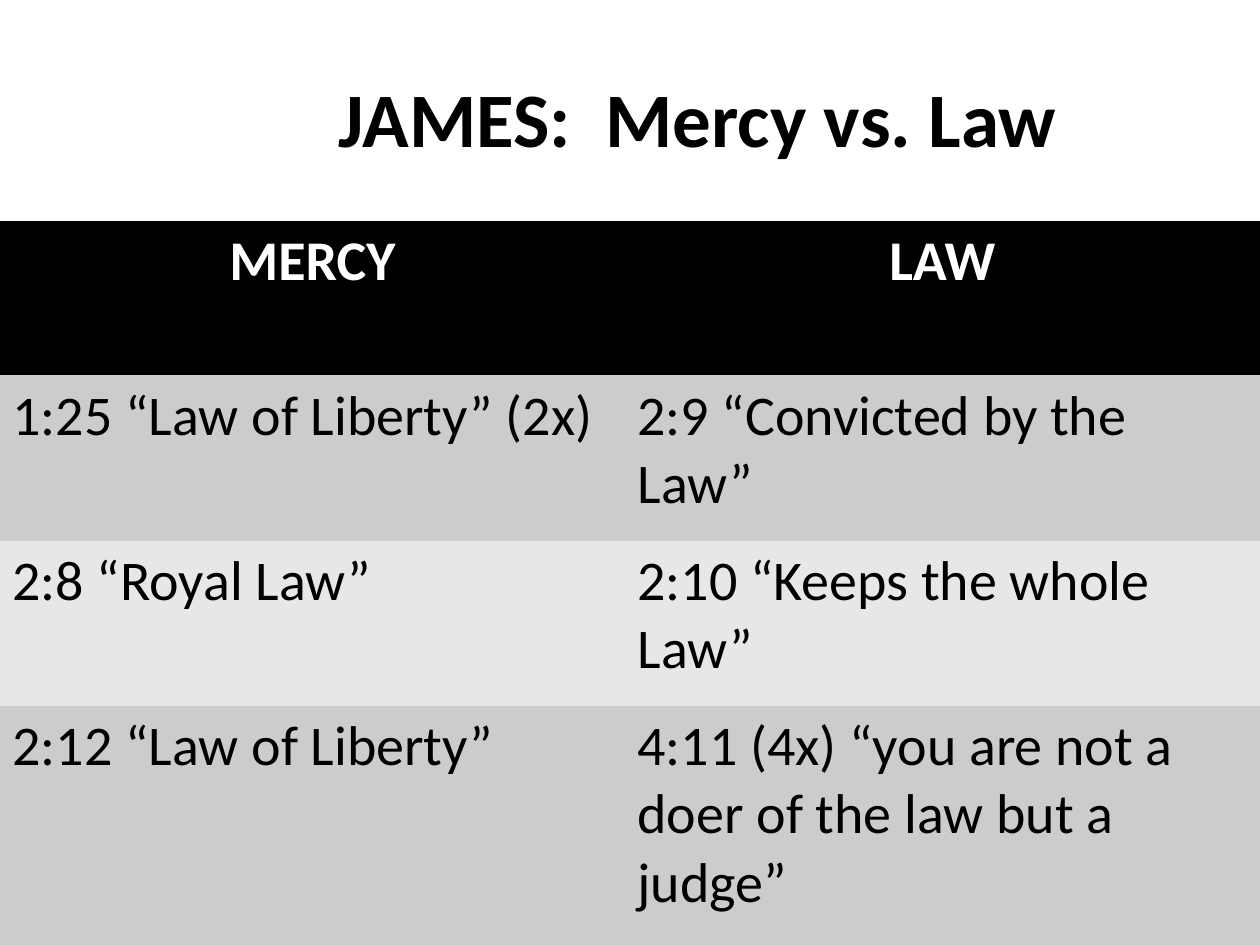
from pptx import Presentation
from pptx.dml.color import RGBColor
from pptx.enum.text import MSO_ANCHOR, PP_ALIGN
from pptx.oxml.ns import qn
from pptx.util import Inches, Pt

NO_GRID = "{2D5ABB26-0587-4C30-8999-92F81FD0307C}"


def set_font(p, size, color, bold):
    p.font.name = "Calibri"
    p.font.size = Pt(size)
    p.font.bold = bold
    p.font.color.rgb = RGBColor.from_string(color)


prs = Presentation()
prs.slide_width, prs.slide_height = Inches(10), Inches(7.5)
s = prs.slides.add_slide(prs.slide_layouts[5])

# Title
title = s.shapes.title
title.left, title.top = Inches(1.58), Inches(0.3)
title.width, title.height = Inches(7.92), Inches(1.25)
tf = title.text_frame
tf.text = "JAMES:  Mercy vs. Law"
tf.vertical_anchor = MSO_ANCHOR.MIDDLE
p = tf.paragraphs[0]
p.alignment = PP_ALIGN.CENTER
set_font(p, 44, "000000", True)

# Comparison table: text pair, row height, fill
rows = [
    ("MERCY", "LAW", 1.23, "000000"),
    ("1:25 “Law of Liberty” (2x)", "2:9 “Convicted by the Law”", 1.31, "CCCCCC"),
    ("2:8 “Royal Law”", "2:10 “Keeps the whole Law”", 1.31, "E7E7E7"),
    ("2:12 “Law of Liberty”",
     "4:11 (4x) “you are not a doer of the law but a judge”", 1.9, "CCCCCC"),
]
table = s.shapes.add_table(len(rows), 2, 0, Inches(1.75),
                           prs.slide_width, Inches(5.75)).table
table._tbl.tblPr.find(qn("a:tableStyleId")).text = NO_GRID
table.horz_banding = False
table.columns[0].width = Inches(4.96)
table.columns[1].width = Inches(5.04)

for i, (mercy, law, height, fill) in enumerate(rows):
    table.rows[i].height = Inches(height)
    header = i == 0
    for cell, text in zip(table.rows[i].cells, (mercy, law)):
        cell.fill.solid()
        cell.fill.fore_color.rgb = RGBColor.from_string(fill)
        cell.text = text
        p = cell.text_frame.paragraphs[0]
        p.alignment = PP_ALIGN.CENTER if header else PP_ALIGN.LEFT
        set_font(p, 32, "FFFFFF" if header else "000000", header)

prs.save("out.pptx")
